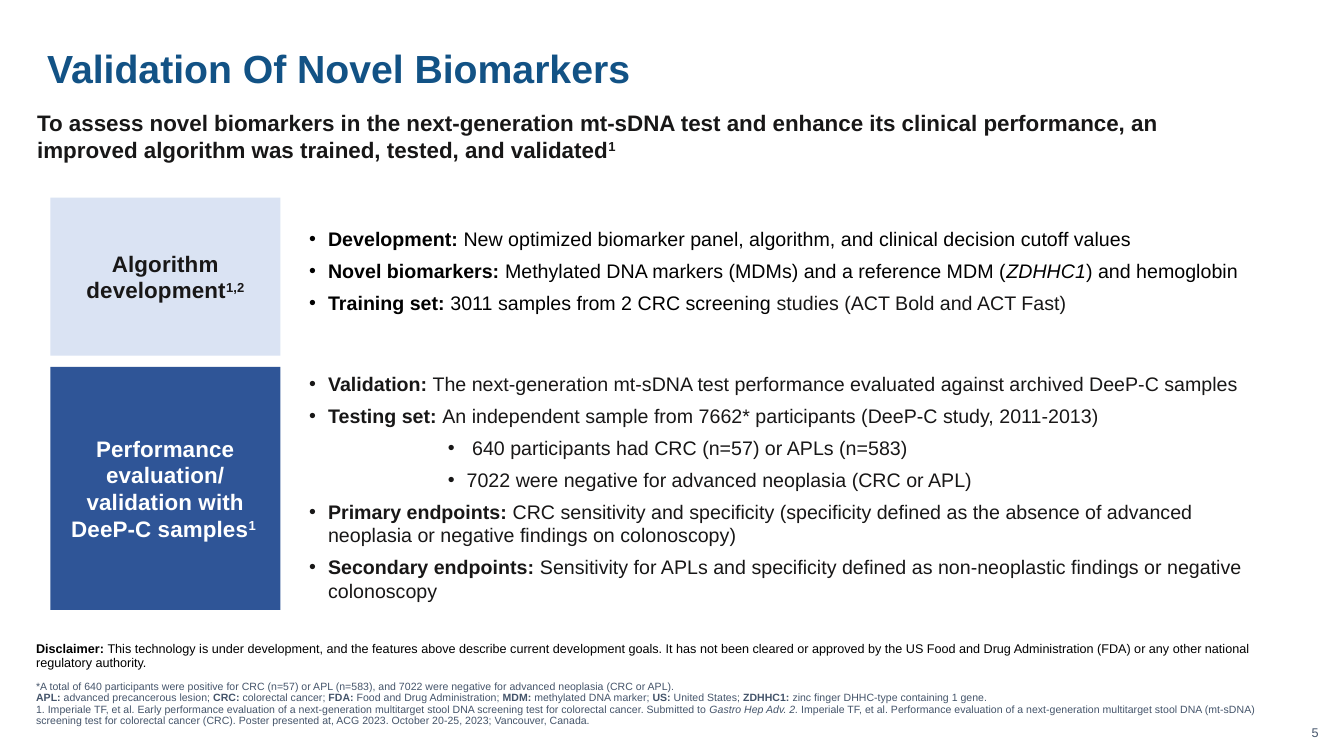
from pptx import Presentation
from pptx.dml.color import RGBColor
from pptx.enum.shapes import MSO_SHAPE
from pptx.enum.text import MSO_ANCHOR, PP_ALIGN
from pptx.oxml.ns import qn
from pptx.util import Pt
from lxml.etree import SubElement

COLORS = {
    "title": "125285", "ink": "181717", "black": "000000", "white": "FFFFFF",
    "pale": "DAE3F3", "blue": "2F5597", "slate": "44546A",
}
FONT = "Arial"

# A run is (text, style, optional color); styles: b bold, i italic, s superscript
TITLE = [("Validation Of Novel Biomarkers", "b")]
SUMMARY = [
    ("To assess novel biomarkers in the next-generation mt-sDNA test and enhance its clinical "
     "performance, an improved algorithm was trained, tested, and validated", "b"),
    ("1", "bs"),
]
PAGE_NUMBER = [("5", "")]

# Each bullet is (level, runs)
STAGES = [
    {
        "top": 141.1, "height": 113, "fill": "pale", "label_color": "ink",
        "label": [("Algorithm development", "b"), ("1,2", "bs")],
        "bullets_top": 158.4, "bullets_height": 70.6, "bullet_color": "black",
        "bullets": [
            (0, [("Development: ", "b"),
                 ("New optimized biomarker panel, algorithm, and clinical decision cutoff values", "")]),
            (0, [("Novel biomarkers: ", "b"),
                 ("Methylated DNA markers (MDMs) and a reference MDM (", ""),
                 ("ZDHHC1", "i"), (") and hemoglobin", "")]),
            (0, [("Training set: ", "b"), ("3011 samples from 2 CRC screening ", ""),
                 ("studies (ACT Bold and ACT Fast)", "", "ink")]),
        ],
    },
    {
        "top": 262.1, "height": 173.5, "fill": "blue", "label_color": "white",
        "label": [("Performance evaluation/\nvalidation with DeeP-C samples", "b"), ("1 ", "bs")],
        "bullets_top": 262.1, "bullets_height": 173.5, "bullet_color": "ink",
        "bullets": [
            (0, [("Validation:", "b"),
                 (" The next-generation mt-sDNA test performance evaluated against archived "
                  "DeeP-C samples", "")]),
            (0, [("Testing set: ", "b"),
                 ("An independent sample from 7662* participants (DeeP-C study, 2011-2013)", "")]),
            (1, [(" 640 participants had CRC (n=57) or APLs (n=583)", "")]),
            (1, [("7022 were negative for advanced neoplasia (CRC or APL)", "")]),
            (0, [("Primary endpoints: ", "b"),
                 ("CRC sensitivity and specificity (specificity defined as the absence of advanced "
                  "neoplasia or negative findings on colonoscopy)", "")]),
            (0, [("Secondary endpoints: ", "b"),
                 ("Sensitivity for APLs and specificity defined as non-neoplastic findings or "
                  "negative colonoscopy", "")]),
        ],
    },
]

DISCLAIMER = [
    ("Disclaimer: ", "b"),
    ("This technology is under development, and the features above describe current development "
     "goals. It has not been cleared or approved by the US Food and Drug Administration (FDA) or "
     "any other national regulatory authority.", ""),
]
FOOTNOTES = [
    [("*A total of 640 participants were positive for CRC (n=57) or APL (n=583), and 7022 were "
      "negative for advanced neoplasia (CRC or APL).", "")],
    [("APL: ", "b"), ("advanced precancerous lesion; ", ""),
     ("CRC: ", "b"), ("colorectal cancer; ", ""),
     ("FDA: ", "b"), ("Food and Drug Administration; ", ""),
     ("MDM: ", "b"), ("methylated DNA marker; ", ""),
     ("US: ", "b"), ("United States; ", ""),
     ("ZDHHC1: ", "b"), ("zinc finger DHHC-type containing 1 gene.", "")],
    [("1. Imperiale TF, et al. Early performance evaluation of a next-generation multitarget stool "
      "DNA screening test for colorectal cancer. Submitted to ", ""),
     ("Gastro Hep Adv. 2. ", "i"),
     ("Imperiale TF, et al. Performance evaluation of a next-generation multitarget stool DNA "
      "(mt-sDNA) screening test for colorectal cancer (CRC). Poster presented at, ACG 2023. "
      "October 20-25, 2023; Vancouver, Canada.", "")],
]

LABEL_LEFT, LABEL_WIDTH = 36, 164.2
BULLETS_LEFT, BULLETS_WIDTH = 213.8, 684
BULLET_HANG = 13.5
BULLET_INDENTS = (13.5, 112.5)


def set_frame(frame, inset_x=7.2, inset_y=3.6, anchor=MSO_ANCHOR.TOP):
    frame.word_wrap = True
    frame.margin_left = frame.margin_right = Pt(inset_x)
    frame.margin_top = frame.margin_bottom = Pt(inset_y)
    frame.vertical_anchor = anchor
    return frame


def add_text_box(slide, left, top, width, height, **frame_options):
    box = slide.shapes.add_textbox(Pt(left), Pt(top), Pt(width), Pt(height))
    return set_frame(box.text_frame, **frame_options)


def add_paragraph(frame, runs, size, color, spacing=None, align=None, tracking=None):
    """Fill the frame's first paragraph if it is still empty, else append one."""
    first = frame.paragraphs[0]
    paragraph = frame.add_paragraph() if first.runs else first
    paragraph.line_spacing = spacing
    paragraph.alignment = align
    for text, style, *own_color in runs:
        for index, line in enumerate(text.split("\n")):
            if index:
                paragraph.add_line_break()
            run = paragraph.add_run()
            run.text = line
            font = run.font
            font.name, font.size = FONT, Pt(size)
            font.bold, font.italic = "b" in style, "i" in style
            font.color.rgb = RGBColor.from_string(COLORS[own_color[0] if own_color else color])
            properties = run._r.get_or_add_rPr()
            if "s" in style:
                properties.set("baseline", "30000")
            if tracking:
                properties.set("spc", str(tracking))
    return paragraph


def add_bullet(frame, level, runs, color):
    paragraph = add_paragraph(frame, runs, 14, color)
    paragraph.level = level
    paragraph.space_after = Pt(6)
    properties = paragraph._p.get_or_add_pPr()
    properties.set("marL", str(Pt(BULLET_INDENTS[level])))
    properties.set("indent", str(-Pt(BULLET_HANG)))
    SubElement(properties, qn("a:buFont")).set("typeface", FONT)
    SubElement(properties, qn("a:buChar")).set("char", "•")


def add_stage(slide, stage):
    label = slide.shapes.add_shape(MSO_SHAPE.RECTANGLE, Pt(LABEL_LEFT), Pt(stage["top"]),
                                   Pt(LABEL_WIDTH), Pt(stage["height"]))
    label.shadow.inherit = False
    label.fill.solid()
    label.fill.fore_color.rgb = RGBColor.from_string(COLORS[stage["fill"]])
    label.line.fill.background()
    label_frame = set_frame(label.text_frame, 9.4, 5, MSO_ANCHOR.MIDDLE)
    add_paragraph(label_frame, stage["label"], 16, stage["label_color"],
                  align=PP_ALIGN.CENTER, tracking=10)

    bullets_frame = add_text_box(slide, BULLETS_LEFT, stage["bullets_top"],
                                 BULLETS_WIDTH, stage["bullets_height"])
    for level, runs in stage["bullets"]:
        add_bullet(bullets_frame, level, runs, stage["bullet_color"])


def main():
    presentation = Presentation()
    presentation.slide_width, presentation.slide_height = Pt(960), Pt(540)
    slide = presentation.slides.add_slide(presentation.slide_layouts[6])

    title = add_text_box(slide, 26.6, 17.3, 889.2, 51.8, anchor=MSO_ANCHOR.BOTTOM)
    add_paragraph(title, TITLE, 28, "title", spacing=0.85)
    summary = add_text_box(slide, 26.6, 77.8, 871.2, 38.9, inset_x=0, inset_y=0)
    add_paragraph(summary, SUMMARY, 16, "ink")

    for stage in STAGES:
        add_stage(slide, stage)

    notes = add_text_box(slide, 18.7, 453.6, 904.3, 69.1, anchor=MSO_ANCHOR.BOTTOM)
    disclaimer = add_paragraph(notes, DISCLAIMER, 9, "black", spacing=0.9)
    disclaimer.space_after = Pt(8)
    for footnote in FOOTNOTES:
        add_paragraph(notes, footnote, 7.5, "slate", spacing=0.9)

    page_number = add_text_box(slide, 907.2, 519.1, 34.6, 9.4, inset_x=0, inset_y=0,
                               anchor=MSO_ANCHOR.BOTTOM)
    add_paragraph(page_number, PAGE_NUMBER, 9, "slate", spacing=0.9, align=PP_ALIGN.RIGHT)

    presentation.save("out.pptx")


if __name__ == "__main__":
    main()
